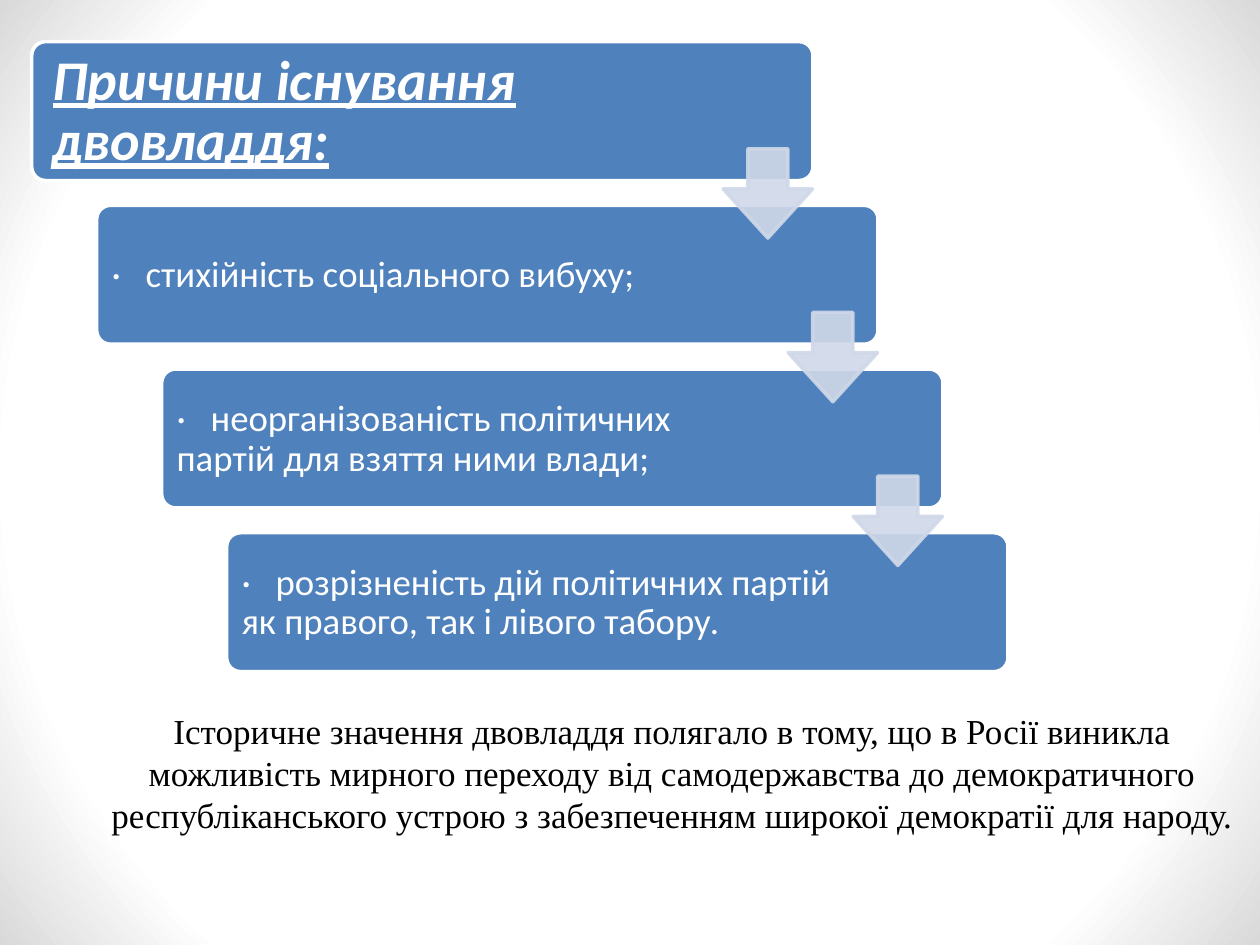
from lxml.etree import SubElement
from pptx import Presentation
from pptx.dml.color import RGBColor
from pptx.enum.shapes import MSO_SHAPE
from pptx.enum.text import MSO_ANCHOR, MSO_AUTO_SIZE, PP_ALIGN
from pptx.oxml import parse_xml
from pptx.oxml.ns import nsdecls, qn
from pptx.util import Cm, Pt

TITLE = "Причини існування двовладдя:"
CAUSES = [
    "·   стихійність соціального вибуху;",
    "·   неорганізованість політичних партій для взяття ними влади;",
    "·   розрізненість дій політичних партій як правого, так і лівого табору.",
]
SUMMARY = (
    "Історичне значення двовладдя полягало в тому, що в Росії виникла "
    "можливість мирного переходу від самодержавства до демократичного "
    "республіканського устрою з забезпеченням широкої демократії для народу."
)
COLORS = {"box": "4F81BD", "white": "FFFFFF", "edge": "D9D9D9",
          "arrow": "D0D8E8", "black": "000000"}
LEFT, TOP, STEP_X, STEP_Y = 0.64, 0.84, 1.31, 3.3
BOX_W, BOX_H = 15.75, 2.8
ARROW_LEFT, ARROW_TOP, ARROW_SIZE = 14.58, 3.0, 1.8


def rgb(name):
    return RGBColor.from_string(COLORS[name])


def add_shape(s, kind, x, y, w, h, adjustments, fill, line):
    sp = s.shapes.add_shape(kind, Cm(x), Cm(y), Cm(w), Cm(h))
    sp.shadow.inherit = False
    for i, value in enumerate(adjustments):
        sp.adjustments[i] = value
    sp.fill.solid()
    sp.fill.fore_color.rgb = rgb(fill)
    sp.line.color.rgb = rgb(line)
    sp.line.width = Pt(2)
    return sp


def add_vignette(s, prs):
    sp = s.shapes.add_shape(MSO_SHAPE.RECTANGLE, 0, 0, prs.slide_width, prs.slide_height)
    sp.shadow.inherit = False
    sp.line.fill.background()
    stops = "".join(
        f'<a:gs pos="{pos}000"><a:srgbClr val="{COLORS[name]}"/></a:gs>'
        for pos, name in [(0, "white"), (79, "white"), (100, "edge")]
    )
    grad = parse_xml(
        f'<a:gradFill {nsdecls("a")} rotWithShape="1"><a:gsLst>{stops}</a:gsLst>'
        '<a:path path="circle"><a:fillToRect l="50000" t="50000" r="50000" b="50000"/>'
        '</a:path></a:gradFill>'
    )
    sp._element.spPr.find(qn("a:prstGeom")).addnext(grad)


def write(sp, text, font, size, color, align, anchor, spacing=None, inset=None):
    tf = sp.text_frame
    tf.word_wrap = True
    tf.auto_size = MSO_AUTO_SIZE.NONE
    tf.vertical_anchor = anchor
    if inset is not None:
        tf.margin_left = tf.margin_right = tf.margin_top = tf.margin_bottom = Cm(inset)
    p = tf.paragraphs[0]
    p.alignment = align
    if spacing:
        p.line_spacing = spacing
    r = p.add_run()
    r.text = text
    r.font.name = font
    r.font.size = Pt(size)
    r.font.color.rgb = rgb(color)
    return r


def set_alpha(sp, percent):
    for color in sp._element.spPr.iter(qn("a:srgbClr")):
        SubElement(color, qn("a:alpha")).set("val", str(percent * 1000))


def main():
    prs = Presentation()
    prs.slide_width, prs.slide_height = Cm(25.4), Cm(19.05)
    s = prs.slides.add_slide(prs.slide_layouts[5])
    add_vignette(s, prs)

    title = s.shapes.title
    for i, text in enumerate([TITLE] + CAUSES):
        x, y = LEFT + i * STEP_X, TOP + i * STEP_Y
        add_shape(s, MSO_SHAPE.ROUNDED_RECTANGLE, x, y, BOX_W, BOX_H, [0.1], "box", "white")
        area = Cm(x + 0.08), Cm(y + 0.1), Cm(12.47), Cm(2.64)
        if i == 0:
            title.left, title.top, title.width, title.height = area
            s.shapes._spTree.append(title._element)
            r = write(title, text, "Calibri", 32, "white", PP_ALIGN.LEFT,
                      MSO_ANCHOR.MIDDLE, 0.9, 0.34)
            r.font.bold = r.font.italic = r.font.underline = True
        else:
            write(s.shapes.add_textbox(*area), text, "Calibri", 21, "white",
                  PP_ALIGN.LEFT, MSO_ANCHOR.MIDDLE, 0.9, 0.22)

    for i in range(len(CAUSES)):
        arrow = add_shape(s, MSO_SHAPE.DOWN_ARROW, ARROW_LEFT + i * STEP_X,
                          ARROW_TOP + i * STEP_Y, ARROW_SIZE, ARROW_SIZE,
                          [0.45, 0.55], "arrow", "arrow")
        set_alpha(arrow, 90)

    summary = s.shapes.add_textbox(Cm(1.7), Cm(14.17), Cm(23.7), Cm(2.82))
    write(summary, SUMMARY, "Times New Roman", 20, "black", PP_ALIGN.CENTER, MSO_ANCHOR.TOP)
    summary.text_frame.auto_size = MSO_AUTO_SIZE.SHAPE_TO_FIT_TEXT
    prs.save("out.pptx")


if __name__ == "__main__":
    main()
